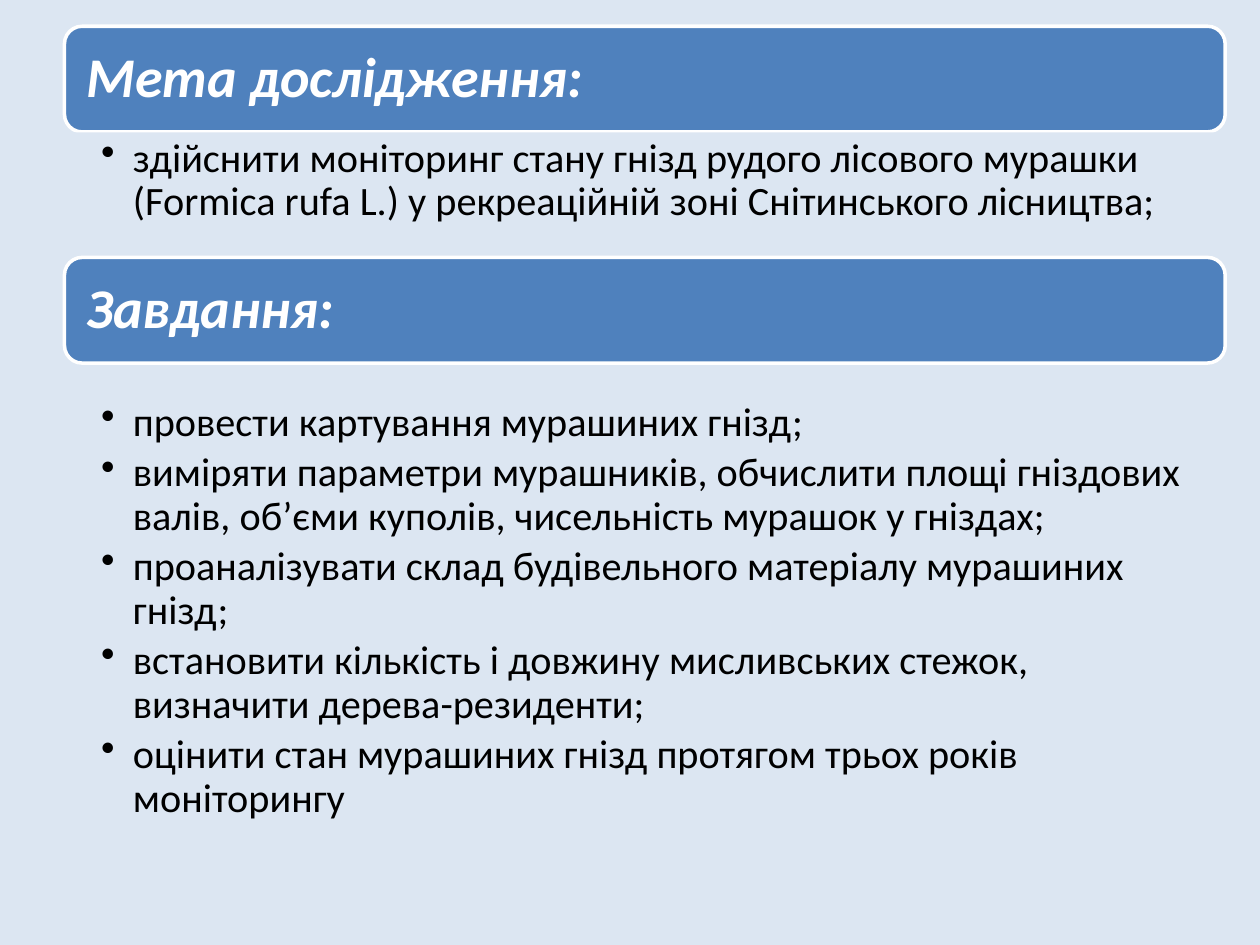
"""Build a slide with the aim and the tasks of an ant nest study."""
from dataclasses import dataclass

import pptx
import pptx.dml.color
import pptx.enum.shapes
import pptx.enum.text
import pptx.oxml.ns
import pptx.util
from lxml import etree
from pptx.util import Cm, Pt


@dataclass(frozen=True)
class Theme:
    font: str = "Calibri"
    background: str = "DCE6F2"
    accent: str = "4F81BD"
    light: str = "FFFFFF"
    dark: str = "000000"
    heading_size: int = 32
    body_size: int = 23


THEME = Theme()
LEFT, WIDTH = Cm(1.3), Cm(23.4)
HEADING_HEIGHT = Cm(2.13)

AIM = [
    "здійснити моніторинг стану гнізд рудого лісового мурашки "
    "(Formica rufa L.) у рекреаційній зоні Снітинського лісництва;",
]
TASKS = [
    "провести картування мурашиних гнізд;",
    "виміряти параметри мурашників, обчислити площі гніздових валів, "
    "об’єми куполів, чисельність мурашок у гніздах;",
    "проаналізувати склад будівельного матеріалу мурашиних гнізд;",
    "встановити кількість і довжину мисливських стежок, "
    "визначити дерева-резиденти;",
    "оцінити стан мурашиних гнізд протягом трьох років моніторингу",
]


def paint(fill, color):
    fill.solid()
    fill.fore_color.rgb = pptx.dml.color.RGBColor.from_string(color)


def set_insets(frame, left, right, vertical):
    frame.margin_left, frame.margin_right = left, right
    frame.margin_top = frame.margin_bottom = vertical


def format_text(para, size, color, emphasis=False):
    para.alignment = pptx.enum.text.PP_ALIGN.LEFT
    para.line_spacing = 0.9
    for span in para.runs:
        span.font.name = THEME.font
        span.font.size = Pt(size)
        span.font.bold = span.font.italic = emphasis
        span.font.color.rgb = pptx.dml.color.RGBColor.from_string(color)


def add_bullet(para):
    properties = para._p.get_or_add_pPr()
    properties.set("marL", str(Cm(0.64)))
    properties.set("indent", str(-Cm(0.64)))
    bullet = etree.SubElement(properties, pptx.oxml.ns.qn("a:buChar"))
    bullet.set("char", "•")


def add_heading(page, top, text):
    bar = page.shapes.add_shape(
        pptx.enum.shapes.MSO_SHAPE.ROUNDED_RECTANGLE,
        LEFT, top, WIDTH, HEADING_HEIGHT)
    bar.shadow.inherit = False
    paint(bar.fill, THEME.accent)
    paint(bar.line.fill, THEME.light)
    bar.line.width = Pt(2)
    frame = bar.text_frame
    frame.word_wrap = True
    frame.vertical_anchor = pptx.enum.text.MSO_ANCHOR.MIDDLE
    set_insets(frame, Cm(0.34), Cm(0.34), Cm(0.33))
    frame.text = text
    format_text(frame.paragraphs[0], THEME.heading_size, THEME.light, True)


def add_bullets(page, top, height, items):
    box = page.shapes.add_textbox(LEFT, top, WIDTH, height)
    paint(box.fill, THEME.background)
    frame = box.text_frame
    frame.word_wrap = True
    set_insets(frame, Cm(0.74), Cm(0.58), Cm(0.1))
    frame.text = "\n".join(items)
    for para in frame.paragraphs:
        para.level = 1
        add_bullet(para)
        para.space_after = Pt(4)
        format_text(para, THEME.body_size, THEME.dark)


def main():
    deck = pptx.Presentation()
    deck.slide_width, deck.slide_height = Cm(25.4), Cm(19.05)
    page = deck.slides.add_slide(deck.slide_layouts[6])
    paint(page.background.fill, THEME.background)
    add_heading(page, Cm(0.53), "Мета дослідження:")
    add_bullets(page, Cm(2.67), Cm(2.03), AIM)
    add_heading(page, Cm(5.19), "Завдання:")
    add_bullets(page, Cm(8), Cm(9.14), TASKS)
    deck.save("out.pptx")


if __name__ == "__main__":
    main()
